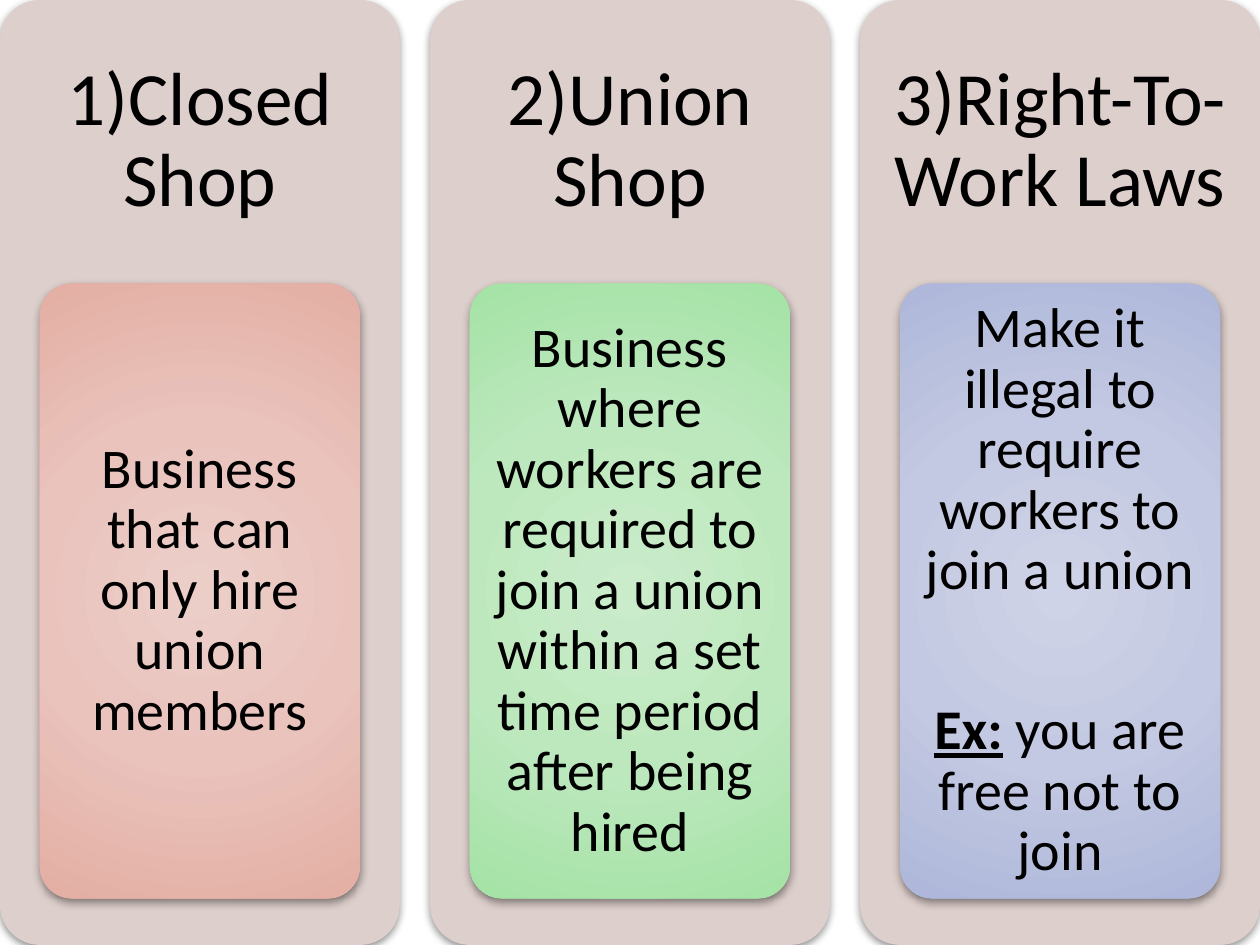
from lxml import etree
from pptx import Presentation
from pptx.enum import shapes, text
from pptx.oxml import ns
from pptx.util import Cm, Pt
from pptx.dml.color import RGBColor

COLOURS = {
    "panel": "DDCFCC",
    "ink": "000000",
    "red": ("ECCEC9", "E9C3BC", "E4AFA4", "E4A89B"),
    "green": ("CAECCA", "BDE8BE", "A6E3A7", "9DE39F"),
    "blue": ("CFD3E7", "C3C9E2", "AFB8DA", "A8B2DA"),
}
STOPS = (0, 50, 97, 100)
COLUMNS = [
    ("1)Closed Shop", "red", [[("Business that can only hire union members", False)]]),
    ("2)Union Shop", "green", [[("Business where workers are required to join a union "
                                 "within a set time period after being hired", False)]]),
    ("3)Right-To-Work Laws", "blue", [
        [("Make it illegal to require workers to join a union", False)],
        [("Ex:", True), (" you are free not to join", False)],
    ]),
]
SLIDE_WIDTH, SLIDE_HEIGHT = 25.4, 19.05
PANEL_WIDTH, HEADING_HEIGHT = 8.06, 5.72
CARD_WIDTH, CARD_HEIGHT, CARD_INSET = 6.45, 12.39, 0.18


def add_child(parent, tag, **attributes):
    """Append a DrawingML element to a parent."""
    return etree.SubElement(parent, ns.qn("a:" + tag), attributes)


def add_shadow(shape):
    """Give a shape a soft shadow straight below it."""
    shape.shadow.inherit = False
    effects = shape._element.spPr.find(ns.qn("a:effectLst"))
    shadow = add_child(effects, "outerShdw", blurRad=str(Pt(5)), dist=str(Pt(2)),
                       dir="5400000", algn="ctr", rotWithShape="0")
    colour = add_child(shadow, "srgbClr", val=COLOURS["ink"])
    add_child(colour, "alpha", val="43000")


def fill_radial(shape, hues):
    """Fill a shape with a gradient running outward from its centre."""
    shape.fill.background()
    properties = shape._element.spPr
    gradient = etree.Element(ns.qn("a:gradFill"), rotWithShape="1")
    stops = add_child(gradient, "gsLst")
    for position, hue in zip(STOPS, hues):
        stop = add_child(stops, "gs", pos=str(position * 1000))
        add_child(stop, "srgbClr", val=hue)
    circle = add_child(gradient, "path", path="circle")
    add_child(circle, "fillToRect", **dict.fromkeys("ltrb", "50000"))
    properties.replace(properties.find(ns.qn("a:noFill")), gradient)


def add_rounded(page, area, fill):
    """Draw a shadowed rounded rectangle in one colour or a gradient."""
    shape = page.shapes.add_shape(shapes.MSO_SHAPE.ROUNDED_RECTANGLE, *map(Cm, area))
    shape.adjustments[0] = 0.1
    shape.line.fill.background()
    if isinstance(fill, str):
        shape.fill.solid()
        shape.fill.fore_color.rgb = RGBColor.from_string(fill)
    else:
        fill_radial(shape, fill)
    add_shadow(shape)


def add_text(page, area, paragraphs, size, side, edge, gap=0):
    """Place centred paragraphs of (wording, emphasised) spans."""
    frame = page.shapes.add_textbox(*map(Cm, area)).text_frame
    frame.word_wrap = True
    frame.vertical_anchor = text.MSO_ANCHOR.MIDDLE
    frame.margin_left = frame.margin_right = Cm(side)
    frame.margin_top = frame.margin_bottom = Cm(edge)
    for index, spans in enumerate(paragraphs):
        para = frame.add_paragraph() if index else frame.paragraphs[0]
        para.alignment = text.PP_ALIGN.CENTER
        para.line_spacing = 0.9
        if index < len(paragraphs) - 1:
            para.space_after = Pt(gap)
        for wording, emphasised in spans:
            span = para.add_run()
            span.text = wording
            span.font.name = "Calibri"
            span.font.size = Pt(size)
            span.font.bold = span.font.underline = emphasised
            span.font.color.rgb = RGBColor.from_string(COLOURS["ink"])


def main():
    """Build the three-column slide."""
    deck = Presentation()
    deck.slide_width, deck.slide_height = Cm(SLIDE_WIDTH), Cm(SLIDE_HEIGHT)
    page = deck.slides.add_slide(deck.slide_layouts[6])
    pitch = (SLIDE_WIDTH - PANEL_WIDTH) / (len(COLUMNS) - 1)
    for index, (heading, hue, paragraphs) in enumerate(COLUMNS):
        left = index * pitch
        card_left = left + (PANEL_WIDTH - CARD_WIDTH) / 2
        add_rounded(page, (left, 0, PANEL_WIDTH, SLIDE_HEIGHT), COLOURS["panel"])
        add_text(page, (left, 0, PANEL_WIDTH, HEADING_HEIGHT), [[(heading, False)]],
                 size=43, side=0.46, edge=0.46)
        add_rounded(page, (card_left, HEADING_HEIGHT, CARD_WIDTH, CARD_HEIGHT), COLOURS[hue])
        add_text(page, (card_left + CARD_INSET, HEADING_HEIGHT + CARD_INSET,
                        CARD_WIDTH - 2 * CARD_INSET, CARD_HEIGHT - 2 * CARD_INSET),
                 paragraphs, size=32, side=0.23, edge=0.18, gap=57)
    deck.save("out.pptx")


if __name__ == "__main__":
    main()
